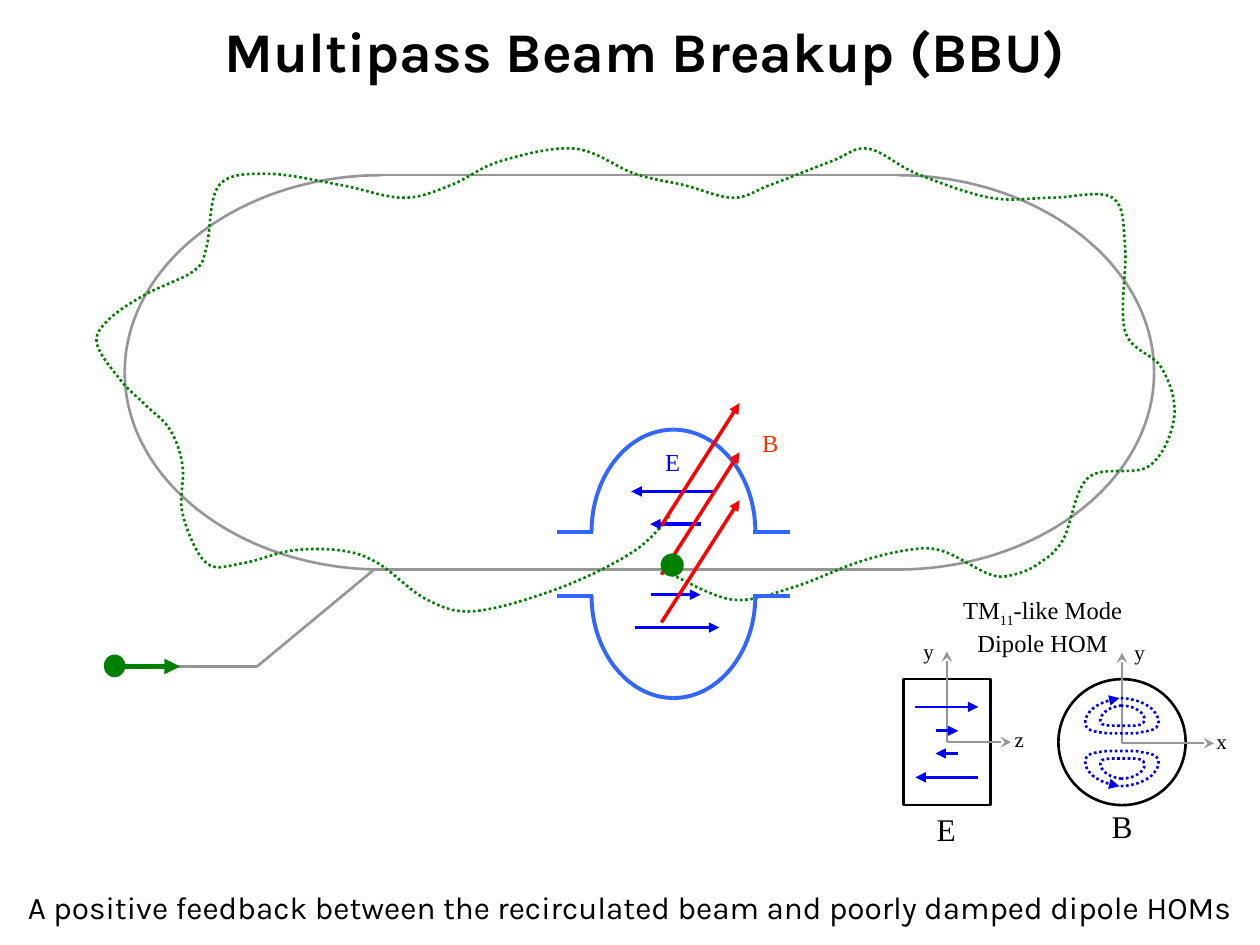
import lxml.etree
import pptx
import pptx.dml.color
import pptx.enum.dml
import pptx.enum.shapes
import pptx.enum.text
import pptx.oxml.ns
import pptx.util

Inches = pptx.util.Inches
SERIF, SANS = "Times New Roman", "Karla"
BLACK, GRAY, GREEN, BLUE, RED, WALL = "000000", "969696", "008000", "0000FF", "FF0000", "3366FF"
ARC = 0.55
ORBIT = [
    (5.33, 4.56), (5.82, 4.76), (6.3, 4.66), (6.79, 4.47), (7.18, 4.37), (7.47, 4.37),
    (7.86, 4.56), (8.05, 4.56), (8.25, 4.47), (8.44, 4.28), (8.64, 3.79), (9.12, 3.7),
    (9.32, 3.31), (9.22, 2.92), (8.93, 2.63), (8.93, 1.96), (8.83, 1.57), (8.35, 1.57),
    (7.86, 1.57), (7.28, 1.38), (6.89, 1.18), (6.6, 1.28), (6.11, 1.47), (5.82, 1.57),
    (5.43, 1.47), (5.04, 1.38), (4.56, 1.18), (3.97, 1.28), (3.58, 1.47), (3.2, 1.57),
    (2.71, 1.47), (2.13, 1.38), (1.74, 1.47), (1.64, 1.96), (1.54, 2.15), (1.15, 2.34),
    (0.86, 2.54), (0.77, 2.73), (0.96, 3.02), (1.15, 3.21), (1.35, 3.41), (1.45, 3.7),
    (1.45, 4.08), (1.64, 4.47), (1.93, 4.47), (2.32, 4.37), (2.71, 4.37), (3, 4.47),
    (3.39, 4.76), (3.78, 4.85), (4.46, 4.66), (5.04, 4.37), (5.33, 4.08)]
OUTER_LOOP = [
    (-0.01, 0.35), (0.19, 0.34), (0.29, 0.24), (0.29, 0.16), (0.29, 0.08), (0.17, 0.09),
    (0.11, 0.07), (0.11, 0.07), (-0.11, 0.07), (-0.11, 0.07), (-0.18, 0.08), (-0.28, 0.08),
    (-0.29, 0.14), (-0.3, 0.19), (-0.26, 0.31), (-0.02, 0.35)]
INNER_LOOP = [
    (-0.01, 0.29), (0.12, 0.29), (0.18, 0.22), (0.18, 0.18), (0.18, 0.13), (0.11, 0.13),
    (0.07, 0.13), (0.07, 0.13), (-0.06, 0.13), (-0.06, 0.13), (-0.1, 0.13), (-0.17, 0.13),
    (-0.17, 0.16), (-0.18, 0.19), (-0.15, 0.27), (-0.01, 0.29)]


def color(hex_code):
    return pptx.dml.color.RGBColor.from_string(hex_code)


def sub(parent, tag, **attributes):
    return lxml.etree.SubElement(parent, pptx.oxml.ns.qn(tag), **attributes)


def stroke(part, hex_code, weight, arrow=None, dotted=False):
    part.line.color.rgb = color(hex_code)
    part.line.width = pptx.util.Pt(weight)
    if dotted:
        part.line.dash_style = pptx.enum.dml.MSO_LINE.ROUND_DOT
    if arrow:
        sub(part.line._get_or_add_ln(), "a:tailEnd", type=arrow)


def segment(shapes, start, end, hex_code, weight, arrow=None):
    connector = shapes.add_connector(pptx.enum.shapes.MSO_CONNECTOR.STRAIGHT,
                                     *map(Inches, (*start, *end)))
    stroke(connector, hex_code, weight, arrow)
    sub(connector._element.spPr, "a:effectLst")


def curve(shapes, points, hex_code, weight, arrow=None, dotted=False):
    emu = [(Inches(x), Inches(y)) for x, y in points]
    builder = shapes.build_freeform(*emu[0])
    builder.add_line_segments(emu[1:], close=False)
    outline = builder.convert_to_shape()
    lines = outline._element.findall(".//" + pptx.oxml.ns.qn("a:lnTo"))
    for i in range(0, len(lines), 3):
        bezier = sub(lines[i].getparent(), "a:cubicBezTo")
        for line in lines[i:i + 3]:
            bezier.append(line[0])
            line.getparent().remove(line)
    outline.fill.background()
    outline.shadow.inherit = False
    stroke(outline, hex_code, weight, arrow, dotted)


def quarter(shapes, x, y, rx, ry, hex_code, weight):
    curve(shapes, [(x, y + ry), (x + ARC * rx, y + ry), (x + rx, y + ARC * ry), (x + rx, y)],
          hex_code, weight)


def figure(shapes, kind, box, hex_code, weight, fill=None):
    shape = shapes.add_shape(kind, *map(Inches, box))
    shape.shadow.inherit = False
    if fill:
        shape.fill.solid()
        shape.fill.fore_color.rgb = color(fill)
    else:
        shape.fill.background()
    stroke(shape, hex_code, weight)


def write(paragraph, text, size, font=SERIF, hex_code=BLACK, bold=False):
    run = paragraph.add_run()
    run.text = text
    run.font.size, run.font.name, run.font.bold = pptx.util.Pt(size), font, bold
    run.font.color.rgb = color(hex_code)
    return run


def label(shapes, box, text, size, font=SERIF, hex_code=BLACK, wrap=False, centered=False):
    frame = shapes.add_textbox(*map(Inches, box)).text_frame
    frame.word_wrap = wrap
    paragraph = frame.paragraphs[0]
    if centered:
        paragraph.alignment = pptx.enum.text.PP_ALIGN.CENTER
    write(paragraph, text, size, font, hex_code)
    return frame


def heading(title, left, top, width, height):
    title.left, title.top, title.width, title.height = map(Inches, (left, top, width, height))
    title.text_frame.word_wrap = False
    title.text_frame.vertical_anchor = pptx.enum.text.MSO_ANCHOR.MIDDLE
    paragraph = title.text_frame.paragraphs[0]
    paragraph.alignment = pptx.enum.text.PP_ALIGN.CENTER
    write(paragraph, "Multipass Beam Breakup (BBU)", 32, SANS, bold=True)


def ring(shapes, left, top, width, height):
    rx, ry = width / 4, height / 2
    for side in (-1, 1):
        segment(shapes, (left + rx, top + ry + side * ry),
                (left + width - rx, top + ry + side * ry), GRAY, 1.5)
        for x, sweep in ((left + rx, -rx), (left + width - rx, rx)):
            quarter(shapes, x, top + ry, sweep, side * ry, GRAY, 1.5)


def injector(shapes, left, top, width, height):
    floor, bend = top + height, left + 1.21
    segment(shapes, (left, floor), (bend, floor), GRAY, 1.5)
    segment(shapes, (bend, floor), (left + width, top), GRAY, 1.5)
    figure(shapes, pptx.enum.shapes.MSO_SHAPE.OVAL, (left, floor - 0.09, 0.16, 0.17),
           GREEN, 0.75, GREEN)
    segment(shapes, (left + 0.07, floor), (left + 0.6, floor), GREEN, 3, "triangle")


def beam_orbit(shapes):
    padded = [ORBIT[0], *ORBIT, ORBIT[-1]]
    points = [ORBIT[0]]
    for before, start, end, after in zip(padded, padded[1:], padded[2:], padded[3:]):
        points += [tuple(s + (e - b) / 6 for b, s, e in zip(before, start, end)),
                   tuple(e - (a - s) / 6 for s, e, a in zip(start, end, after)), end]
    curve(shapes, points, GREEN, 1.5, dotted=True)


def cavity(shapes, left, top, width, height):
    x, rx, ry, pipe = left + width / 2, 0.65, 0.81, 0.29
    for y, sweep in ((top + ry, -ry), (top + height - ry, ry)):
        for side in (-1, 1):
            quarter(shapes, x, y, side * rx, sweep, WALL, 2.25)
        for start in (left, left + width - pipe):
            segment(shapes, (start, y), (start + pipe, y), WALL, 2.25)
    for start, end, y in ((0.62, 1.29, 1.57), (0.75, 1.14, 1.31),
                          (1.26, 0.59, 0.49), (1.14, 0.74, 0.75)):
        segment(shapes, (left + start, top + y), (left + end, top + y), BLUE, 2, "triangle")
    for y in (0.76, 1.15, 1.53):
        segment(shapes, (left + 0.83, top + y), (left + 1.45, top + y - 0.97), RED, 2, "triangle")
    label(shapes, (left + 1.53, top - 0.06, 0.71, 0.77), "B", 14, hex_code="FF3300")
    label(shapes, (left + 0.76, top + 0.09, 0.71, 0.77), "E", 14, hex_code=BLUE)


def mode_name(shapes, left, top, width, height):
    frame = label(shapes, (left, top, width, height), "TM", 14, centered=True)
    index = write(frame.paragraphs[0], "11", 14)
    index._r.get_or_add_rPr().set("baseline", "-25000")
    write(frame.paragraphs[0], "-like Mode", 14)
    second = frame.add_paragraph()
    second.alignment = pptx.enum.text.PP_ALIGN.CENTER
    write(second, "Dipole HOM", 14)


def axes(shapes, x, y, reach):
    for end in ((x + reach, y), (x, y - 0.72)):
        segment(shapes, (x, y), end, GRAY, 1, "stealth")


def magnetic_view(shapes, left, top, width, height):
    x, y = left + width / 2, top + height / 2
    figure(shapes, pptx.enum.shapes.MSO_SHAPE.OVAL, (left, top, width, height), BLACK, 1.5)
    axes(shapes, x, y + 0.01, 0.73)
    for side in (1, -1):
        for loop in (OUTER_LOOP, INNER_LOOP):
            curve(shapes, [(x + dx, y + side * dy) for dx, dy in loop],
                  BLUE, 1.5, "triangle", True)
    label(shapes, (x, top - 0.36, 0.28, 0.3), "y", 12)
    label(shapes, (x + 0.65, y - 0.16, 0.28, 0.3), "x", 12)
    label(shapes, (x - 0.18, top + height - 0.03, 0.37, 0.4), "B", 18)


def electric_view(shapes, left, top, width, height):
    x, y = left + width / 2, top + height / 2
    figure(shapes, pptx.enum.shapes.MSO_SHAPE.RECTANGLE, (left, top, width, height), BLACK, 1.5)
    axes(shapes, x, y, 0.51)
    for reach, rise in ((0.25, 0.28), (0.09, 0.09)):
        for side in (1, -1):
            segment(shapes, (x - side * reach, y - side * rise),
                    (x + side * reach, y - side * rise), BLUE, 1.5, "triangle")
    label(shapes, (left + 0.06, top - 0.37, 0.3, 0.3), "y", 12, wrap=True)
    label(shapes, (x + 0.44, y - 0.17, 0.28, 0.3), "z", 12)
    label(shapes, (x - 0.18, top + height - 0.01, 0.37, 0.4), "E", 18)


def main():
    deck = pptx.Presentation()
    deck.slide_width, deck.slide_height = Inches(10), Inches(7.5)
    slide = deck.slides.add_slide(deck.slide_layouts[5])
    heading(slide.shapes.title, 1.49, 0.08, 7.26, 0.64)
    ring(slide.shapes.add_group_shape().shapes, 0.99, 1.39, 8.17, 3.13)
    injector(slide.shapes.add_group_shape().shapes, 0.83, 4.52, 2.14, 0.77)
    label(slide.shapes, (0, 7, 10, 0.4),
          "A positive feedback between the recirculated beam and poorly damped dipole HOMs",
          18, SANS, wrap=True, centered=True)
    beam_orbit(slide.shapes)
    cavity(slide.shapes, 4.42, 3.41, 1.85, 2.13)
    mode_name(slide.shapes, 7.53, 4.67, 1.49, 0.57)
    magnetic_view(slide.shapes.add_group_shape().shapes, 8.4, 5.39, 1.01, 1)
    electric_view(slide.shapes.add_group_shape().shapes, 7.17, 5.39, 0.69, 1)
    figure(slide.shapes, pptx.enum.shapes.MSO_SHAPE.OVAL, (5.25, 4.4, 0.17, 0.17), GREEN, 1, GREEN)
    deck.save("out.pptx")


if __name__ == "__main__":
    main()
